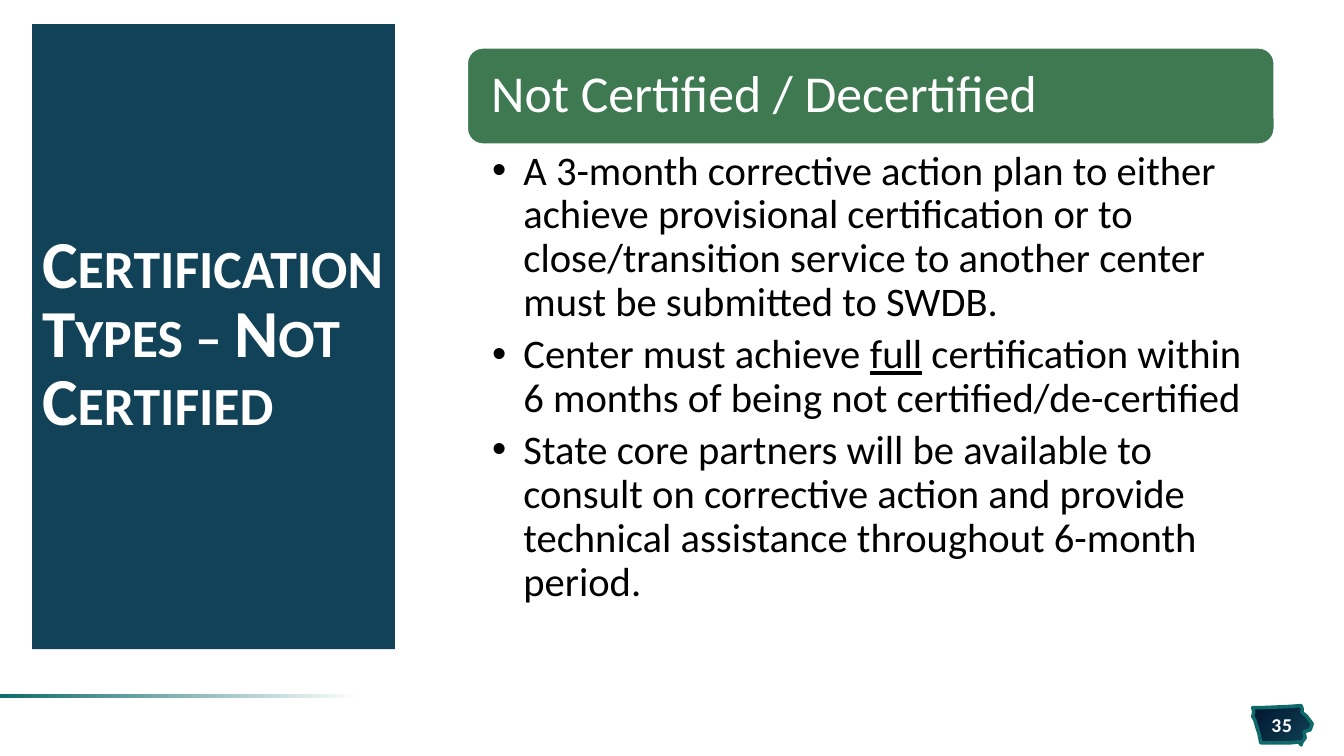
from lxml import etree
from pptx import Presentation
from pptx.dml.color import RGBColor
from pptx.enum.shapes import MSO_SHAPE
from pptx.enum.text import MSO_ANCHOR, MSO_AUTO_SIZE, PP_ALIGN
from pptx.oxml.ns import qn
from pptx.util import Cm, Pt

RECTANGLE, ROUNDED = MSO_SHAPE.RECTANGLE, MSO_SHAPE.ROUNDED_RECTANGLE
TOP, MIDDLE = MSO_ANCHOR.TOP, MSO_ANCHOR.MIDDLE
LEFT, CENTER = PP_ALIGN.LEFT, PP_ALIGN.CENTER
NO_FIT = MSO_AUTO_SIZE.NONE

NAVY, MIDNIGHT, TEAL, GREEN = "114257", "00162E", "0F6A6B", "3E7951"
WHITE, BLACK = "FFFFFF", "000000"

TITLE_FONT = {"size": Pt(48), "bold": True}
NUMBER_FONT = {"size": Pt(14), "bold": True}
HEADER_FONT = {"size": Pt(37), "bold": False}
BULLET_FONT = {"size": Pt(29), "bold": False}

# Each bullet is a list of (text, underlined) pieces
BULLETS = [
    [("A 3-month corrective action plan to either achieve provisional "
      "certification or to close/transition service to another center must "
      "be submitted to SWDB.", False)],
    [("Center must achieve ", False), ("full", True),
     (" certification within 6 months of being not certified/de-certified", False)],
    [("State core partners will be available to consult on corrective action "
      "and provide technical assistance throughout 6-month period.", False)],
]

# State outline in hundredths of an inch from the corner of its box
STATE_OUTLINE = [
    (48, 0), (34, 1), (10, 2), (0, 2), (1, 6), (0, 11), (2, 14), (4, 21),
    (6, 27), (7, 32), (8, 37), (37, 37), (46, 36), (48, 39), (49, 36),
    (52, 32), (51, 26), (57, 24), (59, 18), (56, 14), (53, 10), (49, 7), (49, 3),
]


def color(value):
    return RGBColor.from_string(value)


def apply(target, values):
    for name, value in values.items():
        setattr(target, name, value)


def place(shape, box):
    apply(shape, dict(zip(("left", "top", "width", "height"), map(Cm, box))))


def paint(shape, value):
    shape.fill.solid()
    shape.fill.fore_color.rgb = color(value)


def paint_gradient(shape, stops, angle):
    shape.fill.gradient()
    shape.fill.gradient_angle = angle
    for stop, (position, value) in zip(shape.fill.gradient_stops, stops):
        stop.position = position
        stop.color.rgb = color(value)


def set_frame(frame, margins, anchor):
    names = ("margin_left", "margin_top", "margin_right", "margin_bottom")
    apply(frame, dict(zip(names, map(Cm, margins))))
    apply(frame, {"word_wrap": True, "auto_size": NO_FIT, "vertical_anchor": anchor})


def add_span(para, text, font, value):
    span = para.add_run()
    span.text = text
    apply(span.font, {"name": "Calibri", **font})
    span.font.color.rgb = color(value)
    return span


def title_panel(page, box):
    panel = page.shapes.title
    place(panel, box)
    paint(panel, NAVY)
    set_frame(panel.text_frame, (0.25, 0.13, 0.2, 0.13), MIDDLE)
    para = panel.text_frame.paragraphs[0]
    apply(para, {"alignment": LEFT, "line_spacing": 0.85, "space_before": Pt(0)})
    span = add_span(para, "Certification Types – Not Certified", TITLE_FONT, WHITE)
    span.font._element.set("cap", "small")


def content_panel(page, box):
    left, top, width, height = box
    header_height = 2.46

    # Green heading bar
    header = page.shapes.add_shape(ROUNDED, 0, 0, 0, 0)
    place(header, (left, top, width, header_height))
    paint(header, GREEN)
    header.shadow.inherit = False
    header.line.color.rgb = color(WHITE)
    header.line.width = Pt(2)
    set_frame(header.text_frame, (0.5, 0.38, 0.5, 0.38), MIDDLE)
    para = header.text_frame.paragraphs[0]
    apply(para, {"alignment": LEFT, "line_spacing": 0.9})
    add_span(para, "Not Certified / Decertified", HEADER_FONT, WHITE)

    # Bulleted list below it
    body = page.placeholders[1]
    place(body, (left, top + header_height, width, height - header_height))
    frame = body.text_frame
    set_frame(frame, (0.64, 0.13, 0.74, 0.13), TOP)
    for index, pieces in enumerate(BULLETS):
        para = frame.add_paragraph() if index else frame.paragraphs[0]
        properties = para._p.get_or_add_pPr()
        properties.set("marL", str(Cm(0.79)))
        properties.set("indent", str(-Cm(0.79)))
        etree.SubElement(properties, qn("a:buChar")).set("char", "•")
        apply(para, {"alignment": LEFT, "line_spacing": 0.9,
                     "space_before": Pt(0), "space_after": Pt(5.8)})
        for text, underlined in pieces:
            add_span(para, text, {**BULLET_FONT, "underline": underlined}, BLACK)


def footer_rule(page, box):
    rule = page.shapes.add_shape(RECTANGLE, 0, 0, 0, 0)
    place(rule, box)
    paint_gradient(rule, [(0.06, WHITE), (1, TEAL)], 180)
    rule.line.fill.background()
    rule.shadow.inherit = False


def page_badge(page, box):
    left, top, width, height = box

    # State outline
    builder = page.shapes.build_freeform(*STATE_OUTLINE[0], scale=Cm(0.0254))
    builder.add_line_segments(STATE_OUTLINE[1:], close=True)
    state = builder.convert_to_shape(Cm(left), Cm(top))
    paint_gradient(state, [(0, MIDNIGHT), (1, NAVY)], 315)
    state.line.color.rgb = color(TEAL)
    state.line.width = Pt(2.5)
    state.shadow.inherit = False

    # Page number
    number = page.shapes.add_textbox(0, 0, 0, 0)
    place(number, (left + 0.08, top + 0.2, width - 0.2, height - 0.4))
    set_frame(number.text_frame, (0, 0.13, 0, 0.13), MIDDLE)
    para = number.text_frame.paragraphs[0]
    para.alignment = CENTER
    span = add_span(para, "35", NUMBER_FONT, WHITE)
    span.font._element.set("spc", "50")


def main():
    deck = Presentation()
    apply(deck, {"slide_width": Cm(33.87), "slide_height": Cm(19.05)})
    page = deck.slides.add_slide(deck.slide_layouts[1])
    footer_rule(page, (0, 17.5, 9.65, 0.08))
    page_badge(page, (31.57, 17.78, 1.5, 0.98))
    title_panel(page, (0.81, 0.61, 9.14, 15.75))
    content_panel(page, (11.76, 1.19, 20.37, 14.58))
    deck.save("out.pptx")


if __name__ == "__main__":
    main()
